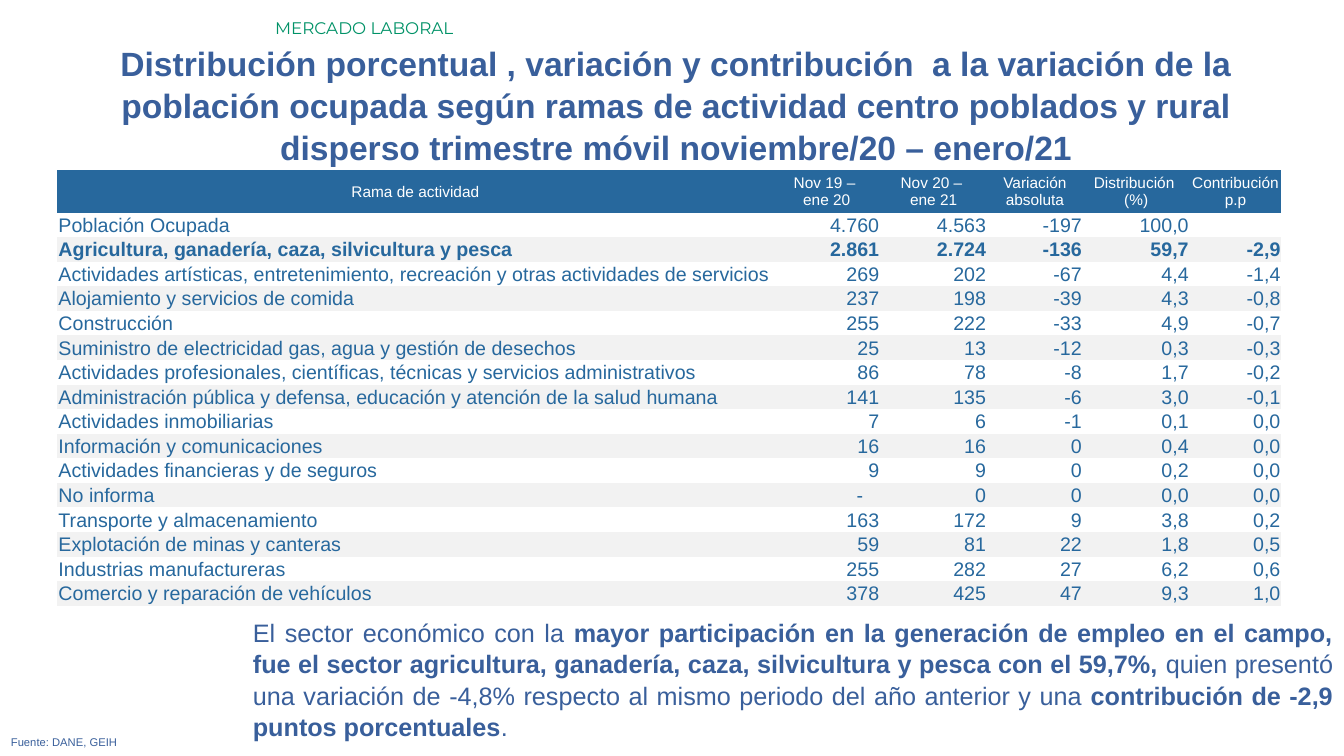
from dataclasses import dataclass

from lxml.etree import SubElement
from pptx import Presentation
from pptx.dml.color import RGBColor
from pptx.enum.text import MSO_ANCHOR as Anchor, MSO_AUTO_SIZE as AutoSize, PP_ALIGN as Align
from pptx.oxml.ns import qn
from pptx.util import Inches, Pt


@dataclass(frozen=True)
class Theme:
    font: str = "Arial"
    section_font: str = "Montserrat"
    text: str = "395F9B"
    section: str = "009267"
    table: str = "27689D"
    header_text: str = "FFFFFF"
    band: str = "F2F2F2"
    title_size: int = 24
    body_size: int = 18
    cell_size: int = 14
    section_size: int = 12
    header_size: int = 11
    source_size: int = 8


THEME = Theme()
NO_GRID_STYLE = "{2D5ABB26-0587-4C30-8999-92F81FD0307C}"
COLUMN_WIDTHS = [7.1, 1.06, 1.06, 0.95, 1.06, 0.91]
HEADER_HEIGHT = 0.42
EMPHASIZED_ROW = 2

TITLE = ("Distribución porcentual , variación y contribución  a la variación de la población ocupada "
         "según ramas de actividad centro poblados y rural disperso trimestre móvil noviembre/20 – enero/21")
HEADERS = [
    ["Rama de actividad"],
    ["Nov 19 – ", "ene 20"],
    ["Nov 20 – ", "ene 21"],
    ["Variación\vabsoluta"],
    ["Distribución ", "(%)"],
    ["Contribución ", "p.p"],
]
ROWS = [
    ("Población Ocupada", "4.760", "4.563", "-197", "100,0", ""),
    ("Agricultura, ganadería, caza, silvicultura y pesca", "2.861", "2.724", "-136", "59,7", "-2,9"),
    ("Actividades artísticas, entretenimiento, recreación y otras actividades de servicios",
     "269", "202", "-67", "4,4", "-1,4"),
    ("Alojamiento y servicios de comida", "237", "198", "-39", "4,3", "-0,8"),
    ("Construcción", "255", "222", "-33", "4,9", "-0,7"),
    ("Suministro de electricidad gas, agua y gestión de desechos", "25", "13", "-12", "0,3", "-0,3"),
    ("Actividades profesionales, científicas, técnicas y servicios administrativos",
     "86", "78", "-8", "1,7", "-0,2"),
    ("Administración pública y defensa, educación y atención de la salud humana",
     "141", "135", "-6", "3,0", "-0,1"),
    ("Actividades inmobiliarias", "7", "6", "-1", "0,1", "0,0"),
    ("Información y comunicaciones", "16", "16", "0", "0,4", "0,0"),
    ("Actividades financieras y de seguros", "9", "9", "0", "0,2", "0,0"),
    ("No informa", "-", "0", "0", "0,0", "0,0"),
    ("Transporte y almacenamiento", "163", "172", "9", "3,8", "0,2"),
    ("Explotación de minas y canteras", "59", "81", "22", "1,8", "0,5"),
    ("Industrias manufactureras", "255", "282", "27", "6,2", "0,6"),
    ("Comercio y reparación de vehículos", "378", "425", "47", "9,3", "1,0"),
]
CONCLUSION = [
    ("El sector económico con la ", False),
    ("mayor participación en la generación de empleo en el campo, fue el sector agricultura, "
     "ganadería, caza, silvicultura y pesca con el 59,7%, ", True),
    ("quien presentó una variación de -4,8% respecto al mismo periodo del año anterior y una ", False),
    ("contribución de -2,9 puntos porcentuales", True),
    (".", False),
]


def write_text(frame, paragraphs, size, color=THEME.text, font=THEME.font,
               bold=False, align=Align.LEFT, line_spacing=None):
    for index, content in enumerate(paragraphs):
        paragraph = frame.paragraphs[0] if index == 0 else frame.add_paragraph()
        paragraph.alignment = align
        if line_spacing:
            paragraph.line_spacing = line_spacing
        if not content:
            SubElement(paragraph._p, qn("a:endParaRPr"), sz=str(size * 100))
            continue
        runs = [(content, bold)] if isinstance(content, str) else content
        for text, run_bold in runs:
            for line_index, line in enumerate(text.split("\v")):
                if line_index:
                    paragraph.add_line_break()
                run = paragraph.add_run()
                run.text = line
                run.font.name = font
                run.font.size = Pt(size)
                run.font.bold = run_bold
                run.font.color.rgb = RGBColor.from_string(color)


def add_text(slide, box, paragraphs, **text_format):
    shape = slide.shapes.add_textbox(*map(Inches, box))
    shape.text_frame.word_wrap = True
    write_text(shape.text_frame, paragraphs, **text_format)


def place_title(slide, box):
    title = slide.shapes.title
    title.left, title.top, title.width, title.height = map(Inches, box)
    frame = title.text_frame
    frame.word_wrap = True
    frame.auto_size = AutoSize.NONE
    frame.vertical_anchor = Anchor.MIDDLE
    write_text(frame, [TITLE], size=THEME.title_size, bold=True,
               align=Align.CENTER, line_spacing=1.04)


def format_cell(cell, fill):
    cell.vertical_anchor = Anchor.MIDDLE
    cell.margin_left = cell.margin_right = cell.margin_top = Inches(0.01)
    cell.margin_bottom = 0
    if fill:
        cell.fill.solid()
        cell.fill.fore_color.rgb = RGBColor.from_string(fill)
    else:
        cell.fill.background()


def add_activity_table(slide, box):
    height = box[3]
    table = slide.shapes.add_table(len(ROWS) + 1, len(HEADERS), *map(Inches, box)).table
    table.horz_banding = table.first_row = False
    table._tbl.tblPr.find(qn("a:tableStyleId")).text = NO_GRID_STYLE
    for column, width in zip(table.columns, COLUMN_WIDTHS):
        column.width = Inches(width)
    for index, row in enumerate(table.rows):
        row.height = Inches((height - HEADER_HEIGHT) / len(ROWS) if index else HEADER_HEIGHT)

    for column_index, lines in enumerate(HEADERS):
        cell = table.cell(0, column_index)
        format_cell(cell, THEME.table)
        write_text(cell.text_frame, lines, size=THEME.header_size,
                   color=THEME.header_text, align=Align.CENTER)

    for row_index, values in enumerate(ROWS, start=1):
        for column_index, value in enumerate(values):
            cell = table.cell(row_index, column_index)
            format_cell(cell, None if row_index % 2 else THEME.band)
            if value == "-":
                cell.margin_right = Inches(0.17)
            write_text(cell.text_frame, [value], size=THEME.cell_size, color=THEME.table,
                       bold=row_index == EMPHASIZED_ROW,
                       align=Align.RIGHT if column_index else Align.LEFT)


def build_slide(presentation):
    slide = presentation.slides.add_slide(presentation.slide_layouts[5])
    place_title(slide, (0.45, 0.38, 12.51, 1.31))
    add_text(slide, (2.63, 0.13, 10.7, 0.3), ["MERCADO LABORAL"],
             size=THEME.section_size, color=THEME.section, font=THEME.section_font)
    add_text(slide, (2.41, 6.06, 10.91, 1.31), [CONCLUSION],
             size=THEME.body_size, align=Align.JUSTIFY, line_spacing=1.04)
    add_text(slide, (0.01, 7.25, 12.91, 0.24), ["Fuente: DANE, GEIH"],
             size=THEME.source_size, align=Align.JUSTIFY)
    add_activity_table(slide, (0.57, 1.69, 12.14, 4.31))


def main():
    presentation = Presentation()
    presentation.slide_width = Inches(13.33)
    presentation.slide_height = Inches(7.5)
    build_slide(presentation)
    presentation.save("out.pptx")


if __name__ == "__main__":
    main()
